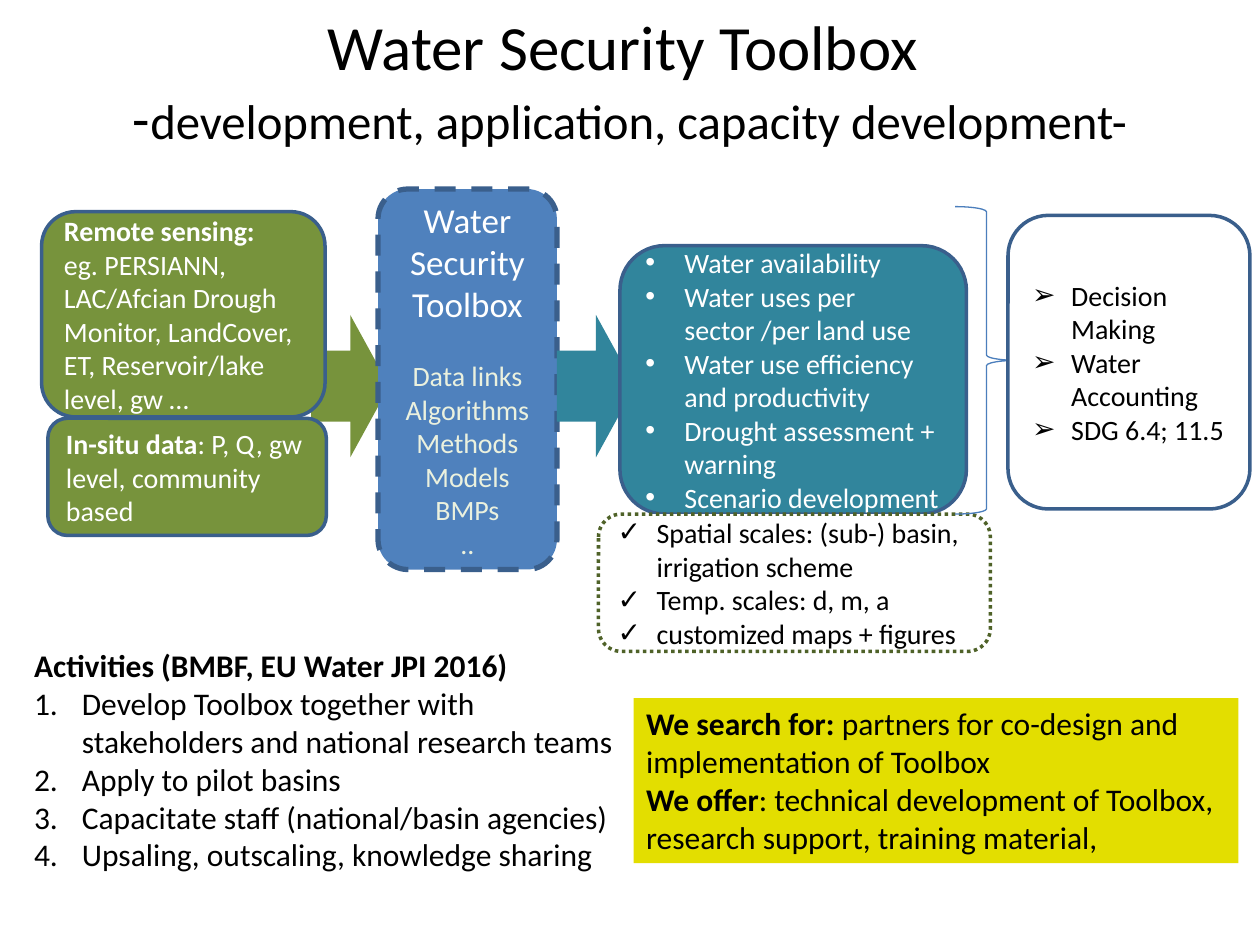
from lxml.etree import SubElement
from pptx import Presentation
from pptx.dml.color import RGBColor
from pptx.enum.dml import MSO_LINE
from pptx.enum.shapes import MSO_SHAPE
from pptx.enum.text import MSO_ANCHOR, MSO_AUTO_SIZE, PP_ALIGN
from pptx.oxml.ns import qn
from pptx.util import Inches, Pt

HUES = {
    "green": "77933C", "blue": "4F81BD", "teal": "31859C", "edge": "3A5F8C",
    "olive": "4F6228", "brace": "4B7EBC", "lime": "E3DE00", "pale": "EBF1DE",
    "white": "FFFFFF", "black": "000000",
}


def hue(name):
    return RGBColor.from_string(HUES[name])


def place(shape, box):
    for key, size in zip(("left", "top", "width", "height"), box):
        setattr(shape, key, Inches(size))


def style(font, size, tone, bold=False):
    form = {"name": "Calibri", "size": Pt(size), "bold": bold}
    for key, value in form.items():
        setattr(font, key, value)
    font.color.rgb = hue(tone)


def mark(para, sign, gap):
    props = para._p.get_or_add_pPr()
    props.set("marL", str(Inches(gap)))
    props.set("indent", str(-Inches(gap)))
    if sign == "1.":
        SubElement(props, qn("a:buFont"), typeface="+mj-lt")
        SubElement(props, qn("a:buAutoNum"), type="arabicPeriod")
    elif sign:
        SubElement(props, qn("a:buFont"), typeface="Arial")
        SubElement(props, qn("a:buChar"), char=sign)
    else:
        SubElement(props, qn("a:buNone"))


def write(frame, lines, size=16, tone="white", sign=None, gap=0,
          align=PP_ALIGN.LEFT, anchor=MSO_ANCHOR.MIDDLE):
    frame.word_wrap = True
    frame.auto_size = MSO_AUTO_SIZE.NONE
    frame.vertical_anchor = anchor
    for index, (bold, plain) in enumerate(lines):
        para = frame.add_paragraph() if index else frame.paragraphs[0]
        mark(para, None if bold else sign, 0 if bold else gap)
        para.alignment = align
        para.space_before = Pt(0)
        for text, heavy in ((bold, True), (plain, False)):
            if text:
                run = para.add_run()
                run.text = text
                style(run.font, size, tone, heavy)


def draw(slide, kind, box, fill=None, edge=None, width=2, dash=None):
    shape = slide.shapes.add_shape(kind, *map(Inches, box))
    shape.shadow.inherit = False
    if fill:
        shape.fill.solid()
        shape.fill.fore_color.rgb = hue(fill)
    else:
        shape.fill.background()
    if edge:
        shape.line.color.rgb = hue(edge)
        shape.line.width = Pt(width)
        shape.line.dash_style = dash
    else:
        shape.line.fill.background()
    return shape


def card(slide, box, fill, lines, edge="edge", dash=None, **form):
    shape = draw(slide, MSO_SHAPE.ROUNDED_RECTANGLE, box, fill, edge, dash=dash)
    write(shape.text_frame, lines, **form)


def arrow(slide, left, fill):
    draw(slide, MSO_SHAPE.RIGHT_ARROW, (left, 2.5, 0.62, 1.13), fill)


def head(shape):
    place(shape, (0, 0.1, 10, 1.06))
    frame = shape.text_frame
    frame.auto_size = MSO_AUTO_SIZE.NONE
    frame.vertical_anchor = MSO_ANCHOR.MIDDLE
    para = frame.paragraphs[0]
    para.alignment = PP_ALIGN.CENTER
    parts = (("Water Security Toolbox ", 36), ("-", 32.4),
             ("development, application, capacity development-", 27.9))
    for index, (text, size) in enumerate(parts):
        if index == 1:
            para.add_line_break()
        run = para.add_run()
        run.text = text
        style(run.font, size, "black")


def core(slide):
    shape = draw(slide, MSO_SHAPE.ROUNDED_RECTANGLE, (3, 1.5, 1.42, 3.02),
                 "blue", "edge", 3, MSO_LINE.DASH)
    tools = ("Water Security Toolbox", "Data links", "Algorithms", "Methods",
             "Models", "BMPs", "..")
    write(shape.text_frame, [("", tool) for tool in tools], tone="pale",
          align=PP_ALIGN.CENTER)
    first, second = shape.text_frame.paragraphs[:2]
    style(first.runs[0].font, 20, "white")
    second.space_before = Pt(19.5)


def plain(*texts):
    return [("", text) for text in texts]


def main():
    deck = Presentation()
    deck.slide_width, deck.slide_height = Inches(10), Inches(7.5)
    slide = deck.slides.add_slide(deck.slide_layouts[1])
    head(slide.shapes.title)

    arrow(slide, 2.47, "green")
    core(slide)
    arrow(slide, 4.42, "teal")
    card(slide, (0.33, 1.68, 2.25, 1.63), "green", [
        ("Remote sensing:", ""),
        ("", "eg. PERSIANN, LAC/Afcian Drough Monitor, LandCover, ET, "
             "Reservoir/lake level, gw …")])
    card(slide, (0.38, 3.32, 2.21, 0.93), "green", [
        ("In-situ data", ": P, Q, gw level, community based")])
    card(slide, (4.92, 1.95, 2.75, 2.13), "teal", plain(
        "Water availability", "Water uses per sector /per land use",
        "Water use efficiency and productivity",
        "Drought assessment + warning", "Scenario development"),
        sign="•", gap=0.31)
    card(slide, (4.75, 4.08, 3.11, 1.09), "white", plain(
        "Spatial scales: (sub-) basin, irrigation scheme",
        "Temp. scales: d, m, a", "customized maps + figures"),
        edge="olive", dash=MSO_LINE.ROUND_DOT, tone="black", sign="✓", gap=0.31)

    tasks = slide.placeholders[1]
    place(tasks, (0.17, 5.08, 4.87, 1.92))
    write(tasks.text_frame, [("Activities (BMBF, EU Water JPI 2016)", "")] + plain(
        "Develop Toolbox together with stakeholders and national research teams",
        "Apply to pilot basins", "Capacitate staff (national/basin agencies)",
        "Upsaling, outscaling, knowledge sharing"),
        size=18, tone="black", sign="1.", gap=0.38, anchor=MSO_ANCHOR.TOP)

    draw(slide, MSO_SHAPE.RIGHT_BRACE, (7.58, 1.64, 0.5, 2.44),
         edge="brace", width=0.75)
    card(slide, (8, 1.71, 1.92, 2.33), "white", plain(
        "Decision Making", "Water Accounting", "SDG 6.4; 11.5"),
        tone="black", sign="➢", gap=0.31)
    offer = draw(slide, MSO_SHAPE.RECTANGLE, (5.03, 5.54, 4.8, 1.31), "lime")
    write(offer.text_frame, [
        ("We search for: ", "partners for co-design and implementation of Toolbox"),
        ("We offer", ": technical development of Toolbox, research support, "
                     "training material,")],
        size=18, tone="black", anchor=MSO_ANCHOR.TOP)
    deck.save("out.pptx")


if __name__ == "__main__":
    main()
